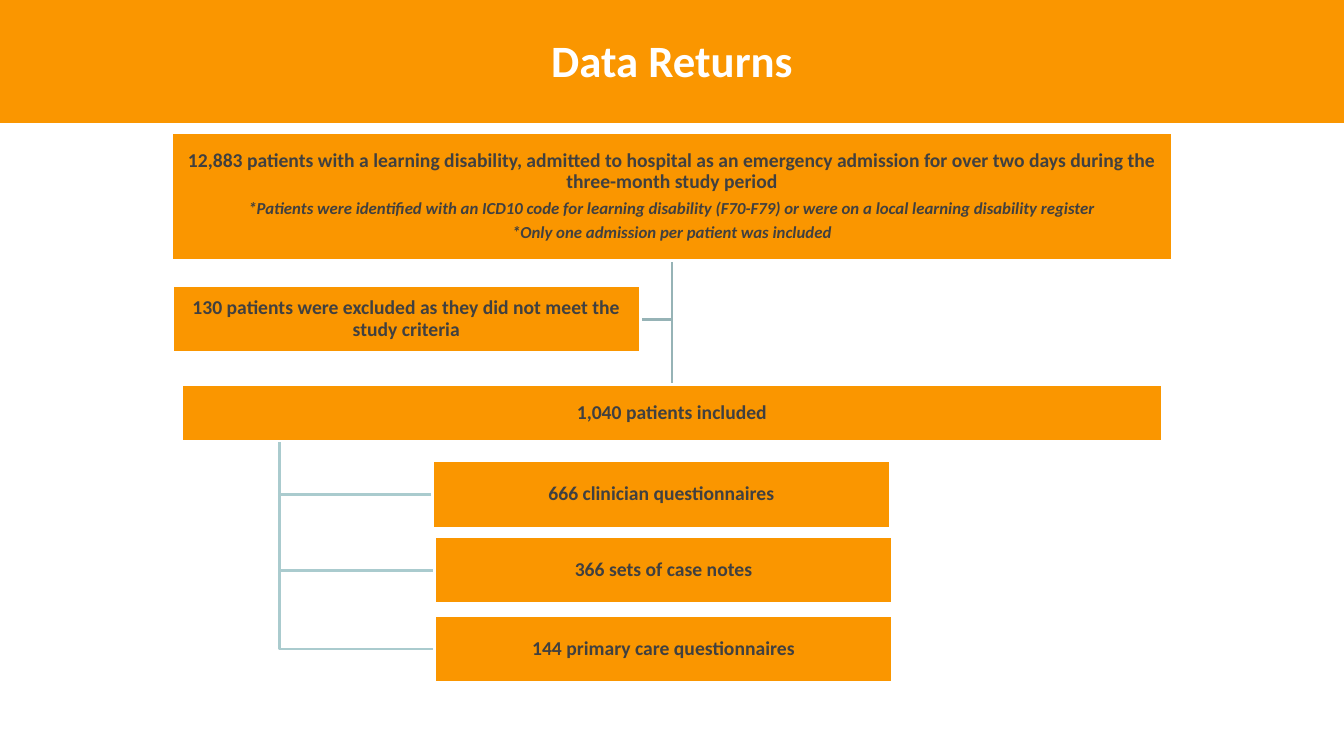
from lxml.etree import SubElement
from pptx import Presentation
from pptx.dml.color import RGBColor
from pptx.enum.shapes import MSO_CONNECTOR, MSO_SHAPE
from pptx.enum.text import MSO_ANCHOR, PP_ALIGN
from pptx.oxml.ns import qn
from pptx.util import Pt

PX = 9525
ORANGE = RGBColor(0xFA, 0x96, 0x00)
WHITE = RGBColor(0xFF, 0xFF, 0xFF)
CHARCOAL = RGBColor(0x40, 0x40, 0x40)
SLATE = RGBColor(0x96, 0xB3, 0xB6)
PALE_TEAL = RGBColor(0xAA, 0xCB, 0xCE)

COHORT = (163, 126, 954, 122)
EXCLUDED = (164, 272, 446, 64)
INCLUDED = (173, 366, 934, 54)
RETURNS = [
    ((412, 439, 436, 64), "666 clinician questionnaires"),
    ((414, 511, 436, 64), "366 sets of case notes"),
    ((414, 586, 436, 64), "144 primary care questionnaires"),
]
STEM_INSET = 93


def add_span(para, text, size, color, italic=False):
    span = para.add_run()
    span.text = text
    font = span.font
    font.name = "Calibri"
    font.size = Pt(size)
    font.bold = True
    font.italic = italic
    font.color.rgb = color


def add_title(page, box, text):
    title = page.shapes.title
    title.left, title.top, title.width, title.height = (n * PX for n in box)
    title.fill.solid()
    title.fill.fore_color.rgb = ORANGE
    frame = title.text_frame
    frame.vertical_anchor = MSO_ANCHOR.MIDDLE
    para = frame.paragraphs[0]
    para.alignment = PP_ALIGN.CENTER
    add_span(para, text, 32, WHITE)


def add_box(page, box, headline, notes=()):
    shape = page.shapes.add_shape(MSO_SHAPE.RECTANGLE, *(n * PX for n in box))
    shape.shadow.inherit = False
    shape.fill.solid()
    shape.fill.fore_color.rgb = ORANGE
    shape.line.color.rgb = WHITE
    shape.line.width = Pt(2)
    frame = shape.text_frame
    frame.word_wrap = True
    frame.vertical_anchor = MSO_ANCHOR.MIDDLE
    frame.margin_left = frame.margin_right = PX
    frame.margin_top = frame.margin_bottom = PX
    lines = [(headline, 14, False)] + [(note, 12, True) for note in notes]
    for index, (text, size, italic) in enumerate(lines):
        para = frame.add_paragraph() if index else frame.paragraphs[0]
        para.alignment = PP_ALIGN.CENTER
        para.line_spacing = 0.9
        para.space_after = Pt(size * 0.35)
        add_span(para, text, size, CHARCOAL, italic)
    return shape


def add_elbow(page, start, end, color):
    builder = page.shapes.build_freeform(*start, scale=PX)
    builder.add_line_segments([(start[0], end[1]), end], close=False)
    elbow = builder.convert_to_shape()
    elbow.shadow.inherit = False
    elbow.fill.background()
    elbow.line.color.rgb = color
    elbow.line.width = Pt(2)


def add_trunk(page, start, end):
    trunk = page.shapes.add_connector(
        MSO_CONNECTOR.STRAIGHT, *(n * PX for n in start + end))
    trunk.line.color.rgb = SLATE
    trunk.line.width = Pt(2)
    SubElement(trunk._element.spPr, qn("a:effectLst"))
    return trunk


def add_flow(page):
    left, top, width, height = COHORT
    fork = (left + width // 2, top + height)
    left, top, width, height = EXCLUDED
    add_elbow(page, fork, (left + width, top + height // 2), SLATE)
    left, top, width, height = INCLUDED
    stem = (left + STEM_INSET, top + height)
    for (x, y, _, tall), _ in reversed(RETURNS):
        add_elbow(page, stem, (x, y + tall // 2), PALE_TEAL)
    trunk = add_trunk(page, fork, (left + width // 2, top))

    cohort = add_box(
        page, COHORT,
        "12,883 patients with a learning disability, admitted to hospital as an "
        "emergency admission for over two days during the three-month study period",
        ["*Patients were identified with an ICD10 code for learning disability "
         "(F70-F79) or were on a local learning disability register",
         "*Only one admission per patient was included"])
    included = add_box(page, INCLUDED, "1,040 patients included")
    for box, text in RETURNS:
        add_box(page, box, text)
    add_box(page, EXCLUDED,
            "130 patients were excluded as they did not meet the study criteria")
    trunk.begin_connect(cohort, 2)
    trunk.end_connect(included, 0)


def main():
    deck = Presentation()
    deck.slide_width = 1280 * PX
    deck.slide_height = 720 * PX
    page = deck.slides.add_slide(deck.slide_layouts[5])
    add_title(page, (0, -3, 1280, 120), "Data Returns")
    add_flow(page)
    deck.save("out.pptx")


if __name__ == "__main__":
    main()
